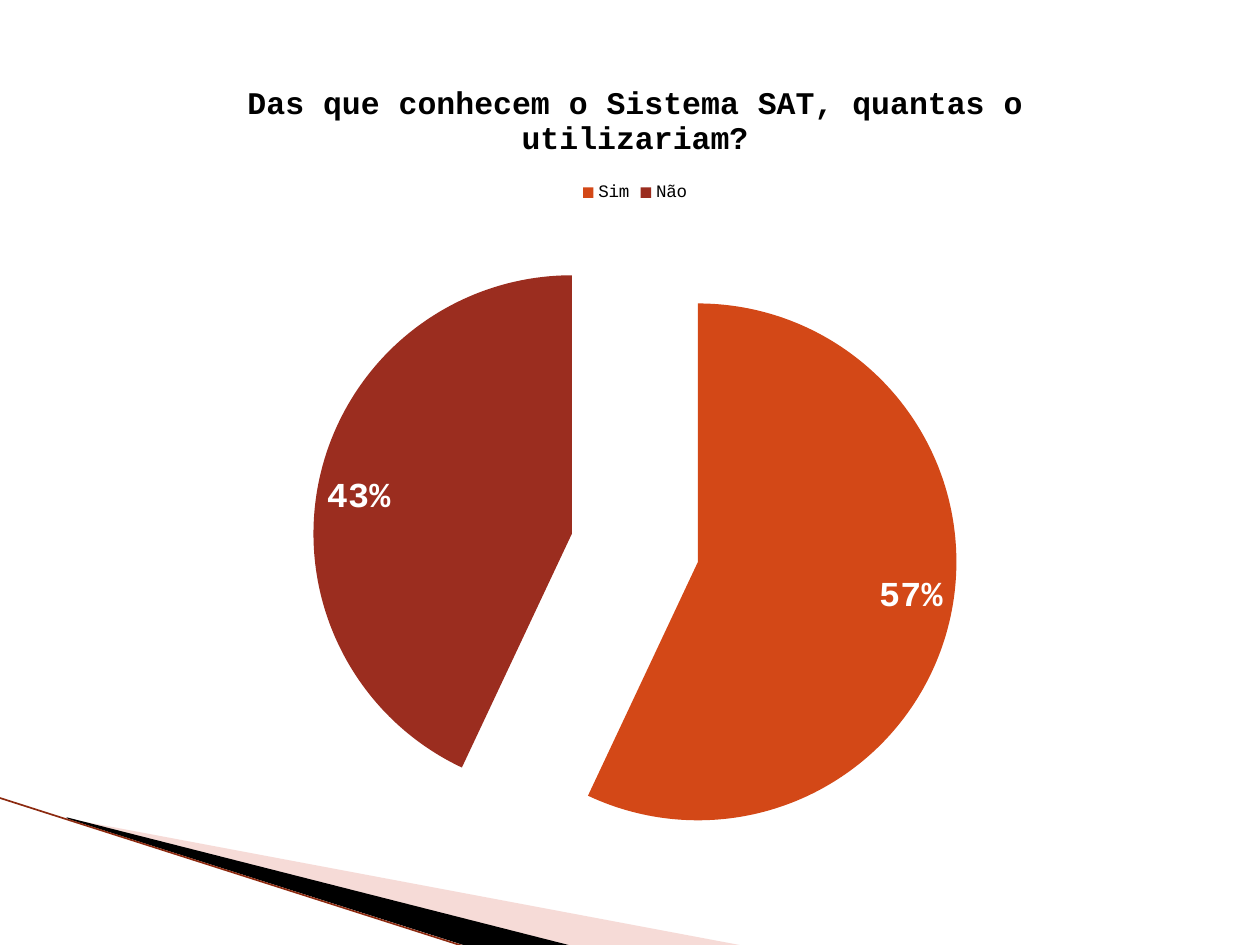
from dataclasses import dataclass

import pptx
import pptx.chart.data
import pptx.dml.color
import pptx.enum.chart
import pptx.enum.shapes
import pptx.oxml
import pptx.oxml.ns
import pptx.util

Pt = pptx.util.Pt
RGBColor = pptx.dml.color.RGBColor

ORANGE = RGBColor(0xD3, 0x48, 0x17)
RED = RGBColor(0x9B, 0x2D, 0x1F)
PINK = RGBColor(0xE9, 0xA5, 0x9D)
BROWN = RGBColor(0x8C, 0x2A, 0x10)
BLACK = RGBColor(0, 0, 0)
WHITE = RGBColor(255, 255, 255)
FONT = "Courier New"


@dataclass(frozen=True)
class Wedge:
    points: tuple[tuple[float, float], ...]
    color: RGBColor
    opacity: int = 100


@dataclass(frozen=True)
class Answer:
    label: str
    value: int
    color: RGBColor


WEDGES = (
    Wedge(((39.6, 468.4), (428.4, 540.7), (328.3, 540.7), (39.6, 468)), PINK, 40),
    Wedge(((38.2, 467.3), (329, 540.7), (267.8, 541.4), (38.9, 468)), BLACK),
)
ANSWERS = (Answer("Sim", 57, ORANGE), Answer("Não", 43, RED))


def draw_wedge(page: pptx.slide.Slide, wedge: Wedge) -> None:
    start, *rest = wedge.points
    builder = page.shapes.build_freeform(*start, scale=float(Pt(1)))
    builder.add_line_segments(rest, close=True)
    shape = builder.convert_to_shape()
    shape.shadow.inherit = False
    shape.fill.solid()
    shape.fill.fore_color.rgb = wedge.color
    shape.line.fill.background()
    if wedge.opacity < 100:
        color = shape.fill._xPr.find(".//" + pptx.oxml.ns.qn("a:srgbClr"))
        alpha = color.makeelement(pptx.oxml.ns.qn("a:alpha"), {"val": str(wedge.opacity * 1000)})
        color.append(alpha)


def draw_edge(page: pptx.slide.Slide) -> None:
    edge = page.shapes.add_connector(
        pptx.enum.shapes.MSO_CONNECTOR.STRAIGHT, Pt(-0.7), Pt(455.8), Pt(267.1), Pt(541.4)
    )
    edge.line.color.rgb = BROWN
    edge.line.width = Pt(0.95)
    properties = edge._element.spPr
    properties.append(properties.makeelement(pptx.oxml.ns.qn("a:effectLst"), {}))


def draw_pie(page: pptx.slide.Slide, title: str, answers: tuple[Answer, ...]) -> None:
    data = pptx.chart.data.CategoryChartData()
    data.categories = [answer.label for answer in answers]
    data.add_series("Series 1", [answer.value for answer in answers])
    chart = page.shapes.add_chart(
        pptx.enum.chart.XL_CHART_TYPE.PIE, Pt(36.7), Pt(31.7), Pt(652.3), Pt(475.9), data
    ).chart
    chart.font.name = FONT
    chart.font.size = Pt(10)
    chart.font.color.rgb = BLACK

    chart.has_title = True
    para = chart.chart_title.text_frame.paragraphs[0]
    para.text = title
    para.font.name = FONT
    para.font.size = Pt(18)
    para.font.bold = True
    para.font.color.rgb = BLACK
    chart.chart_title.include_in_layout = False

    chart.has_legend = True
    chart.legend.position = pptx.enum.chart.XL_LEGEND_POSITION.TOP
    chart.legend.include_in_layout = False

    plot = chart.plots[0]
    plot.vary_by_categories = True
    series = plot.series[0]
    element = series._element
    explosion = element.makeelement(pptx.oxml.ns.qn("c:explosion"), {"val": "25"})
    element.find(pptx.oxml.ns.qn("c:tx")).addnext(explosion)
    for index, answer in enumerate(answers):
        point = series.points[index].format
        point.fill.solid()
        point.fill.fore_color.rgb = answer.color
        point.line.fill.background()

    labels = series.data_labels
    labels.show_value = False
    labels.show_percentage = True
    labels.number_format = "0%"
    labels.number_format_is_linked = False
    labels.position = pptx.enum.chart.XL_LABEL_POSITION.INSIDE_END
    labels.font.name = FONT
    labels.font.size = Pt(20)
    labels.font.bold = True
    labels.font.color.rgb = WHITE


def main() -> None:
    deck = pptx.Presentation()
    deck.slide_width = Pt(720)
    deck.slide_height = Pt(540)
    page = deck.slides.add_slide(deck.slide_layouts[6])
    for wedge in WEDGES:
        draw_wedge(page, wedge)
    draw_edge(page)
    draw_pie(page, "Das que conhecem o Sistema SAT, quantas o utilizariam?", ANSWERS)
    deck.save("out.pptx")


if __name__ == "__main__":
    main()
